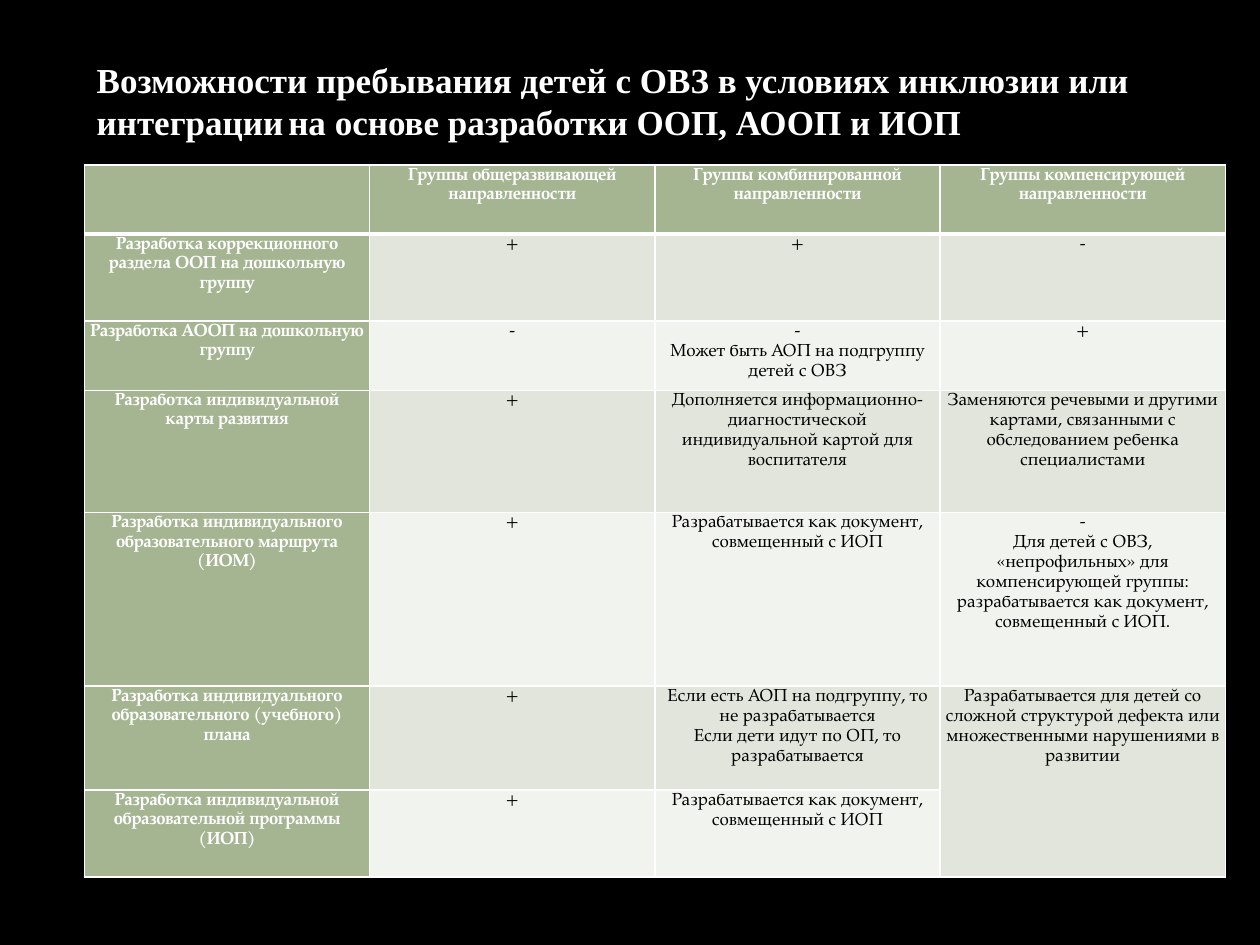
from lxml.etree import SubElement
from pptx import Presentation
from pptx.dml.color import RGBColor
from pptx.enum.text import MSO_ANCHOR as Anchor, PP_ALIGN as Align
from pptx.oxml.ns import qn
from pptx.util import Cm, Pt

WHITE, BLACK, GREEN = "FFFFFF", "000000", "A5B592"
BANDS = ["E1E5DC", "F0F3EE"]
PLAN_ROW, LAST_ROW, LAST_COLUMN = 5, 6, 3

ROW_HEIGHTS = [1.39, 1.75, 1.4, 2.46, 3.5, 2.1, 1.75]
ROWS = [
    ["", "Группы общеразвивающей направленности",
     "Группы комбинированной направленности",
     "Группы компенсирующей направленности"],
    ["Разработка коррекционного раздела ООП на дошкольную группу", "+", "+", "-"],
    ["Разработка АООП на дошкольную группу", "-",
     "-\nМожет быть АОП на подгруппу детей с ОВЗ", "+"],
    ["Разработка индивидуальной карты развития", "+",
     "Дополняется информационно-диагностической индивидуальной картой для воспитателя",
     "Заменяются речевыми и другими картами, связанными с обследованием ребенка специалистами"],
    ["Разработка индивидуального образовательного маршрута (ИОМ)", "+",
     "Разрабатывается как документ, совмещенный с ИОП",
     "-\nДля детей с ОВЗ, «непрофильных» для компенсирующей группы: "
     "разрабатывается как документ, совмещенный с ИОП."],
    ["Разработка индивидуального образовательного (учебного) плана", "+",
     "Если есть АОП на подгруппу, то не разрабатывается\n"
     "Если дети идут по ОП, то разрабатывается",
     "Разрабатывается для детей со сложной структурой дефекта или "
     "множественными нарушениями в развитии"],
    ["Разработка индивидуальной образовательной программы (ИОП)", "+",
     "Разрабатывается как документ, совмещенный с ИОП", ""],
]


def add_run(paragraph, text, *, size, font, color, bold=False):
    run = paragraph.add_run()
    run.text = text
    run.font.size, run.font.name, run.font.bold = Pt(size), font, bold
    run.font.color.rgb = RGBColor.from_string(color)


def style_cell(cell, *, fill, top=1, bottom=1):
    """Set the fill and the white borders; border widths are in points."""
    properties = cell._tc.get_or_add_tcPr()
    for side, width in [("L", 1), ("R", 1), ("T", top), ("B", bottom)]:
        line = SubElement(properties, qn(f"a:ln{side}"), w=str(Pt(width)))
        solid = SubElement(line, qn("a:solidFill"))
        SubElement(solid, qn("a:srgbClr"), val=WHITE)
    cell.fill.solid()
    cell.fill.fore_color.rgb = RGBColor.from_string(fill)
    cell.margin_left = cell.margin_right = Cm(0.1)
    cell.margin_top = cell.margin_bottom = 0


presentation = Presentation()
presentation.slide_width, presentation.slide_height = Cm(25.4), Cm(19.05)
slide = presentation.slides.add_slide(presentation.slide_layouts[6])
slide.background.fill.solid()
slide.background.fill.fore_color.rgb = RGBColor.from_string(BLACK)

# Table
table = slide.shapes.add_table(
    len(ROWS), len(ROWS[0]), Cm(1.7), Cm(3.33), Cm(23), Cm(sum(ROW_HEIGHTS))
).table
for column in table.columns:
    column.width = Cm(5.75)
for row, height in zip(table.rows, ROW_HEIGHTS):
    row.height = Cm(height)

for row_index, texts in enumerate(ROWS):
    for column_index, text in enumerate(texts):
        cell = table.cell(row_index, column_index)
        is_heading = row_index == 0 or column_index == 0
        style_cell(
            cell,
            fill=GREEN if is_heading else BANDS[(row_index - 1) % 2],
            top=3 if row_index == 1 else 1,
            bottom=3 if row_index == 0 else 1,
        )
        if not text:
            continue
        for line_index, line in enumerate(text.split("\n")):
            frame = cell.text_frame
            paragraph = frame.add_paragraph() if line_index else frame.paragraphs[0]
            paragraph.alignment = Align.CENTER
            paragraph.line_spacing = 1.15
            add_run(paragraph, line, size=10, font="TeX Gyre Pagella",
                    color=WHITE if is_heading else BLACK, bold=is_heading)

table.cell(PLAN_ROW, LAST_COLUMN).merge(table.cell(LAST_ROW, LAST_COLUMN))

# Title
title = slide.shapes.add_textbox(Cm(1.7), Cm(1.02), Cm(23), Cm(2.74))
frame = title.text_frame
frame.word_wrap = True
frame.vertical_anchor = Anchor.MIDDLE
frame.margin_bottom = Cm(0.87)
paragraph = frame.paragraphs[0]
for text, size, font in [
    ("Возможности пребывания детей с ОВЗ в условиях инклюзии или интеграции",
     20, "Times New Roman"),
    (" ", 10, "Arial"),
    ("на основе разработки ООП, АООП и ИОП", 20, "Times New Roman"),
]:
    add_run(paragraph, text, size=size, font=font, color=WHITE, bold=True)

presentation.save("out.pptx")
